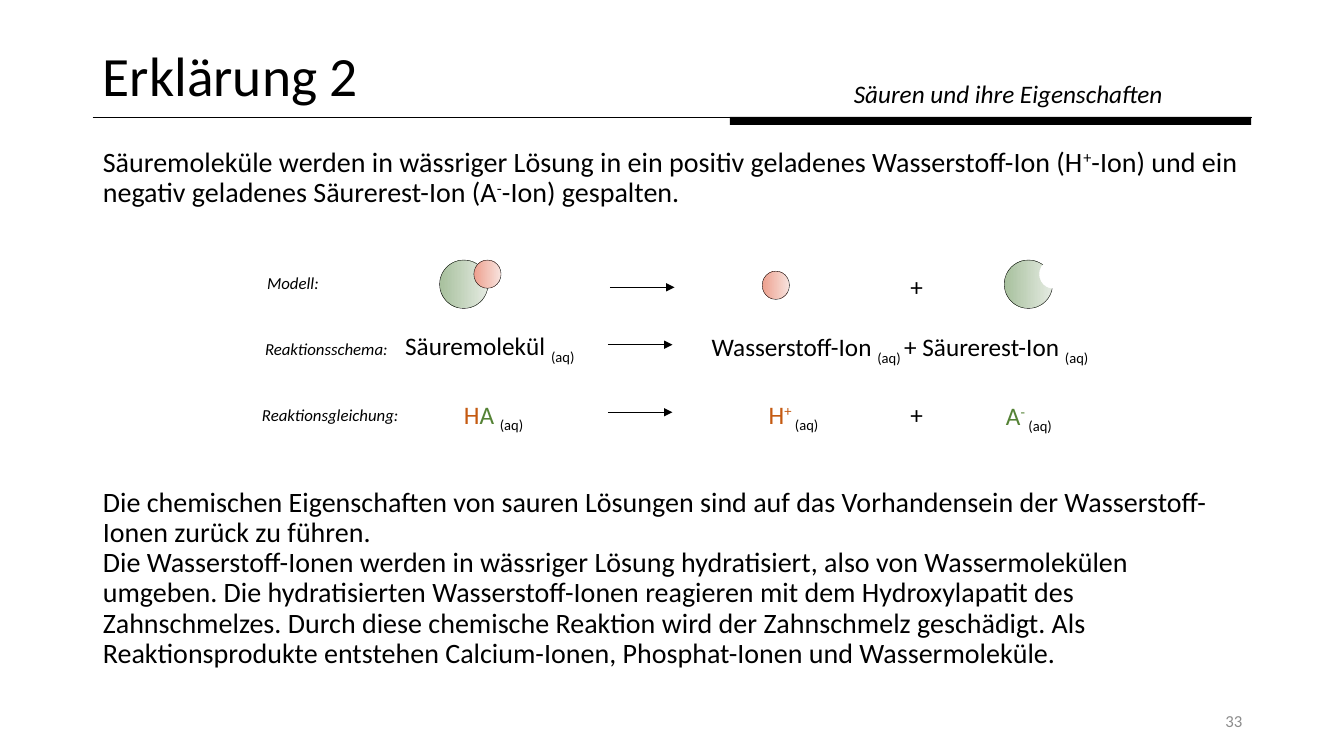
from pptx import Presentation
from pptx.dml.color import RGBColor
from pptx.enum.shapes import MSO_CONNECTOR, MSO_SHAPE
from pptx.enum.text import MSO_ANCHOR, MSO_AUTO_SIZE, PP_ALIGN
from pptx.oxml.ns import qn
from pptx.util import Pt
from lxml import etree

LEFT, MID, RIGHT = PP_ALIGN.LEFT, PP_ALIGN.CENTER, PP_ALIGN.RIGHT
OVAL, RECT = MSO_SHAPE.OVAL, MSO_SHAPE.RECTANGLE
LINE = MSO_CONNECTOR.STRAIGHT
GROW, FIXED = MSO_AUTO_SIZE.SHAPE_TO_FIT_TEXT, MSO_AUTO_SIZE.NONE
PX = 9144  # 100 px to the inch
UP, SUB = 30, -25  # raised and lowered text, in percent
COLORS = {
    "black": "000000", "white": "FFFFFF", "gray": "8C8C8C",
    "orange": "C55A11", "green": "548235",
    "leaf": "A7C09D", "mint": "E5EBE2", "coral": "EDA08E", "blush": "F8E3DE",
}
RGB = {name: RGBColor.from_string(code) for name, code in COLORS.items()}

deck = Presentation()
deck.slide_width, deck.slide_height = 1333 * PX, 750 * PX
slide = deck.slides.add_slide(deck.slide_layouts[1])
shapes = slide.shapes


def write(para, parts, size, color="black", italic=False):
    """Fill a paragraph with (text, baseline, color) parts."""
    for text, base, tint in parts:
        run = para.add_run()
        run.text = text
        font = run.font
        font.name, font.size, font.italic = "Calibri", Pt(size), italic
        font.color.rgb = RGB[tint or color]
        if base:
            run._r.get_or_add_rPr().set("baseline", str(base * 1000))


def label(x, y, w, h, parts, size, align=LEFT, color="black", italic=False):
    """Add a text box of one paragraph."""
    box = shapes.add_textbox(x * PX, y * PX, w * PX, h * PX)
    frame = box.text_frame
    frame.word_wrap, frame.auto_size = True, GROW
    frame.paragraphs[0].alignment = align
    write(frame.paragraphs[0], parts, size, color, italic)


# Title
title = shapes.title
title.left, title.top, title.width, title.height = 92 * PX, 40 * PX, 1150 * PX, 76 * PX
frame = title.text_frame
frame.auto_size, frame.vertical_anchor = FIXED, MSO_ANCHOR.MIDDLE
para = frame.paragraphs[0]
para.alignment, para.line_spacing = LEFT, 0.9
write(para, [("Erklärung 2", 0, None)], 39.6)

# Body: the second paragraph leaves room for the reaction rows
body = slide.placeholders[1]
body.left, body.top, body.width, body.height = 92 * PX, 142 * PX, 1150 * PX, 533 * PX
frame = body.text_frame
frame.auto_size, frame.vertical_anchor = FIXED, MSO_ANCHOR.TOP
split = [
    ("Säuremoleküle werden in wässriger Lösung in ein positiv geladenes "
     "Wasserstoff-Ion (H", 0, None),
    ("+", UP, None),
    ("-Ion) und ein negativ geladenes Säurerest-Ion (A", 0, None),
    ("-", UP, None),
    ("-Ion) gespalten.", 0, None),
]
cause = [
    ("Die chemischen Eigenschaften von sauren Lösungen sind auf das "
     "Vorhandensein der Wasserstoff-Ionen zurück zu führen.", 0, None),
]
effect = [
    ("Die Wasserstoff-Ionen werden in wässriger Lösung hydratisiert, also von "
     "Wassermolekülen umgeben. Die hydratisierten Wasserstoff-Ionen reagieren "
     "mit dem Hydroxylapatit des Zahnschmelzes. Durch diese chemische Reaktion "
     "wird der Zahnschmelz geschädigt. Als Reaktionsprodukte entstehen "
     "Calcium-Ionen, Phosphat-Ionen und Wassermoleküle.", 0, None),
]
for i, (parts, gap) in enumerate([(split, 0), (cause, 199.5), (effect, 0)]):
    para = frame.paragraphs[0] if i == 0 else frame.add_paragraph()
    props = para._p.get_or_add_pPr()
    props.set("marL", "0")
    props.set("indent", "0")
    etree.SubElement(props, qn("a:buNone"))
    para.alignment, para.line_spacing, para.space_before = LEFT, 0.9, Pt(gap)
    write(para, parts, 20)

# Header bar
bar = shapes.add_shape(RECT, 724 * PX, 116 * PX, 517 * PX, 8 * PX)
bar.shadow.inherit = False
bar.fill.solid()
bar.fill.fore_color.rgb = RGB["black"]
bar.line.fill.background()

# Header rule and reaction arrows
for x, y, end, arrow in [(92, 116, 1242, False), (605, 285, 669, True),
                         (603, 342, 667, True), (603, 409, 667, True)]:
    line = shapes.add_connector(LINE, x * PX, y * PX, end * PX, y * PX)
    line.line.color.rgb, line.line.width = RGB["black"], Pt(0.5)
    props = line._element.spPr
    if arrow:
        etree.SubElement(props.find(qn("a:ln")), qn("a:tailEnd"), type="triangle")
    etree.SubElement(props, qn("a:effectLst"))

# Model: molecule, hydrogen ion, acid ion with its bite
for x, y, w, h, start, stop in [
    (436, 258, 48, 48, "leaf", "mint"),
    (470, 258, 27, 28, "coral", "blush"),
    (756, 269, 27, 28, "coral", "blush"),
    (996, 258, 48, 48, "leaf", "mint"),
    (1031, 258, 27, 28, "white", None),
]:
    ball = shapes.add_shape(OVAL, x * PX, y * PX, w * PX, h * PX)
    ball.shadow.inherit = False
    ball.line.width = Pt(0.25)
    if stop:
        ball.fill.gradient()
        ball.fill.gradient_angle = 0
        for mark, place, name in zip(ball.fill.gradient_stops, (0, 1), (start, stop)):
            mark.position, mark.color.rgb = place, RGB[name]
        ball.line.color.rgb = RGB["black"]
    else:
        ball.fill.solid()
        ball.fill.fore_color.rgb = ball.line.color.rgb = RGB[start]

# Topic, row names and page number
label(837, 73, 438, 40, [("Säuren und ihre Eigenschaften", 0, None)], 18, italic=True)
for x, y, w, name in [(255, 266, 152, "Modell:"), (253, 331, 152, "Reaktionsschema:"),
                      (250, 397, 162, "Reaktionsgleichung:")]:
    label(x, y, w, 30, [(name, 0, None)], 12, italic=True)
label(942, 700, 300, 30, [("33", 0, None)], 12, RIGHT, "gray")

# Reaction in words and in symbols
state = ("(aq)", SUB, None)
for x, y, w, align, parts in [
    (893, 264, 31, LEFT, [("+", 0, None)]),
    (392, 323, 195, LEFT, [("Säuremolekül ", 0, None), state]),
    (696, 324, 455, LEFT, [("Wasserstoff-Ion ", 0, None), ("(aq) ", SUB, None),
                           ("+ Säurerest-Ion ", 0, None), state]),
    (392, 391, 195, MID, [("H", 0, "orange"), ("A ", 0, "green"), state]),
    (682, 391, 210, MID, [("H", 0, "orange"), ("+ ", UP, "orange"), state]),
    (893, 391, 31, LEFT, [("+", 0, None)]),
    (923, 392, 195, MID, [("A", 0, "green"), ("- ", UP, "green"), state]),
]:
    label(x, y, w, 40, parts, 18, align)

deck.save("out.pptx")
